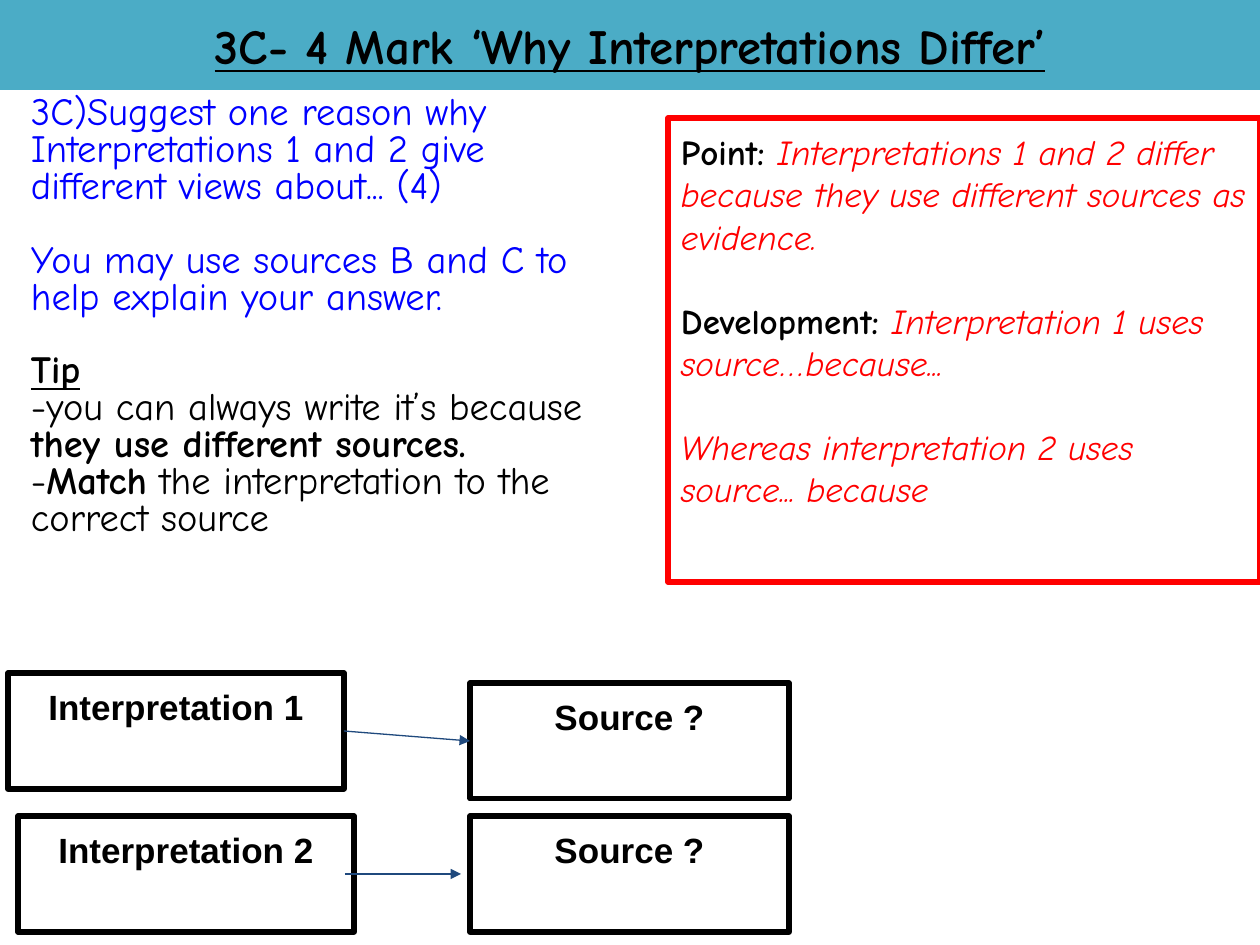
"""Build the 'Why Interpretations Differ' exam technique slide."""
from lxml.etree import SubElement
from pptx import Presentation
from pptx.dml.color import RGBColor
from pptx.enum.shapes import MSO_CONNECTOR, MSO_SHAPE
from pptx.enum.text import MSO_ANCHOR, PP_ALIGN
from pptx.oxml.ns import qn
from pptx.util import Emu, Pt

PX = 914400 / 126
THEME = {
    "band": "4BACC6", "ink": "000000", "question": "0000FF",
    "answer": "FF0000", "arrow": "1F497D",
    "hand": "Comic Neue", "plain": "Arial",
    "title": 28, "body": 22, "label": 20, "outline": 3, "thin": 0.75,
}


def px(*lengths):
    return [Emu(round(length * PX)) for length in lengths]


def write(shape, paragraphs, size, font=THEME["hand"], align=PP_ALIGN.LEFT,
          anchor=MSO_ANCHOR.TOP, inset=13, spacing=1.0, gaps=None):
    frame = shape.text_frame
    frame.word_wrap = True
    frame.vertical_anchor = anchor
    frame.margin_left, frame.margin_right = px(13, 13)
    frame.margin_top, frame.margin_bottom = px(inset, inset)
    for index, pieces in enumerate(paragraphs):
        paragraph = frame.paragraphs[0] if index == 0 else frame.add_paragraph()
        paragraph.alignment = align
        paragraph.line_spacing = spacing
        paragraph.space_before = Pt((gaps or {}).get(index, 0))
        for words, color, style in pieces:
            run = paragraph.add_run()
            run.text = words
            run.font.name = font
            run.font.size = Pt(size)
            run.font.color.rgb = RGBColor.from_string(THEME[color])
            run.font.bold = "b" in style
            run.font.italic = "i" in style
            run.font.underline = "u" in style


deck = Presentation()
deck.slide_width, deck.slide_height = px(1260, 945)
slide = deck.slides.add_slide(deck.slide_layouts[6])
shapes = slide.shapes

title = shapes.add_shape(MSO_SHAPE.RECTANGLE, *px(0, 0, 1260, 90))
title.shadow.inherit = False
title.fill.solid()
title.fill.fore_color.rgb = RGBColor.from_string(THEME["band"])
title.line.fill.background()
write(title, [[("3C- 4 Mark ‘Why Interpretations Differ’", "ink", "bu")]],
      THEME["title"], align=PP_ALIGN.CENTER, anchor=MSO_ANCHOR.MIDDLE, inset=6)

question = shapes.add_textbox(*px(18, 90, 627, 624))
write(question, [
    [("3C)Suggest one reason why Interpretations 1 and 2 give different "
      "views about... (4)", "question", "")],
    [("You may use sources B and C to help explain your answer.", "question", "")],
    [("Tip", "ink", "bu")],
    [("-you can always write it’s because ", "ink", ""),
     ("they use different sources.", "ink", "b")],
    [("-", "ink", ""), ("Match", "ink", "b"),
     (" the interpretation to the correct source", "ink", "")],
], THEME["body"], inset=6, spacing=0.8, gaps={1: 21, 2: 21})

model_answer = [
    [("Point: ", "ink", "b"),
     ("Interpretations 1 and 2 differ because they use different sources as "
      "evidence.", "answer", "i")],
    [("Development: ", "ink", "b"),
     ("Interpretation 1 uses source…because...", "answer", "i")],
    [("Whereas interpretation 2 uses source... because", "answer", "i")],
]
frames = [((668, 118, 592, 464), "answer", model_answer,
           {"gaps": {1: 24, 2: 24}})]
for label, left, top, width in [
    ("Interpretation 2", 18, 816, 336),
    ("Interpretation 1", 8, 673, 336),
    ("Source ?", 470, 683, 319),
    ("Source ?", 470, 816, 319),
]:
    frames.append(((left, top, width, 116), "ink", [[(label, "ink", "b")]],
                   {"font": THEME["plain"], "align": PP_ALIGN.CENTER}))

for place, outline, paragraphs, layout in frames:
    box = shapes.add_shape(MSO_SHAPE.RECTANGLE, *px(*place))
    box.shadow.inherit = False
    box.fill.background()
    box.line.color.rgb = RGBColor.from_string(THEME[outline])
    box.line.width = Pt(THEME["outline"])
    write(box, paragraphs, THEME["label"], **layout)

for ends in [(344, 731, 470, 741), (345, 874, 461, 874)]:
    arrow = shapes.add_connector(MSO_CONNECTOR.STRAIGHT, *px(*ends))
    arrow.line.color.rgb = RGBColor.from_string(THEME["arrow"])
    arrow.line.width = Pt(THEME["thin"])
    SubElement(arrow.line._get_or_add_ln(), qn("a:tailEnd"), type="triangle")
    SubElement(arrow._element.spPr, qn("a:effectLst"))

deck.save("out.pptx")
